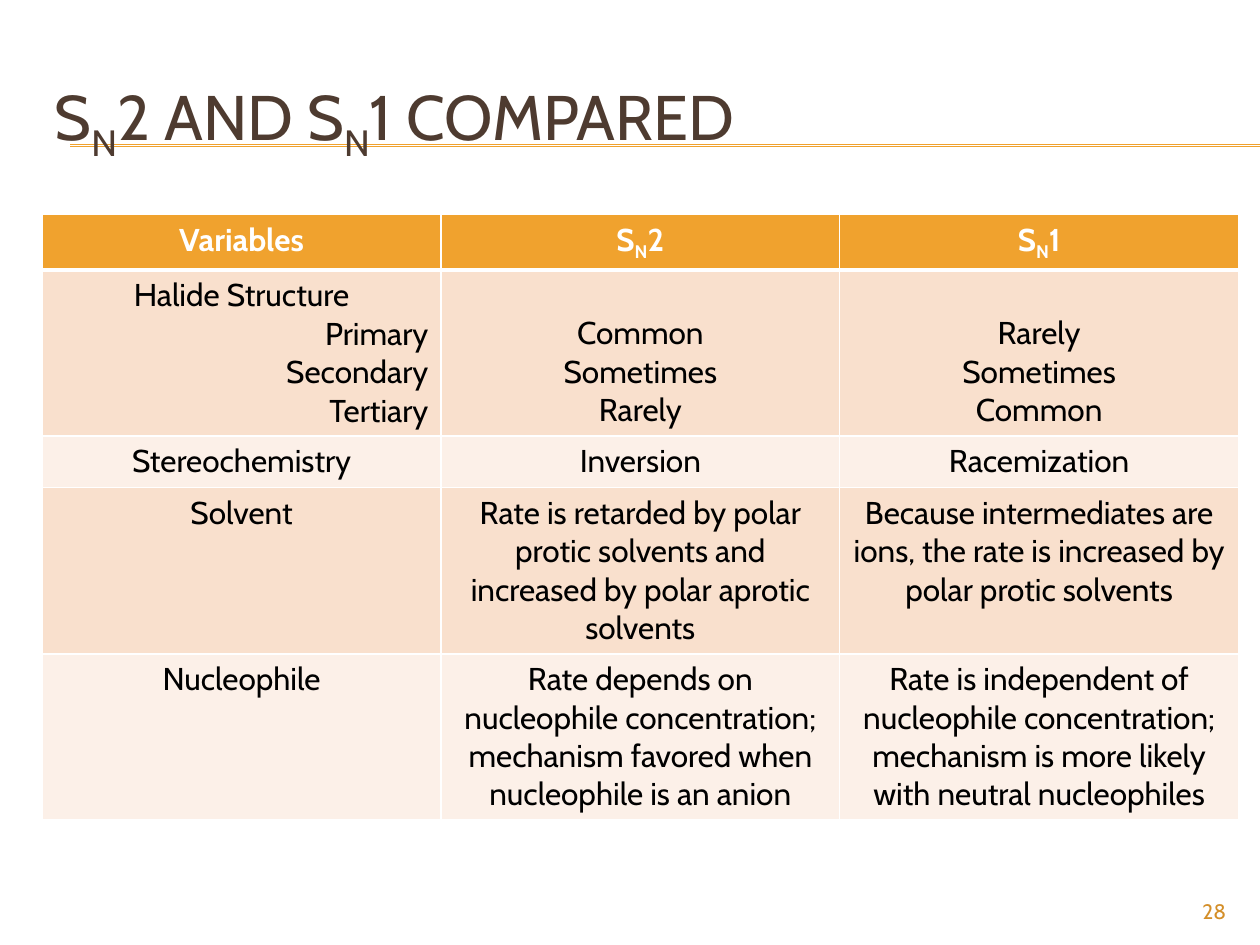
from lxml import etree
from pptx import Presentation
from pptx import util as u
from pptx.dml.color import RGBColor
from pptx.enum import shapes, text
from pptx.oxml.ns import qn

FONT = "Cabin"
COLORS = {
    "accent": "F0A22E",
    "title": "4E3B30",
    "number": "D48F29",
    "white": "FFFFFF",
    "black": "000000",
    "dark_band": "F9E0CD",
    "light_band": "FCF0E8",
}
SUBSCRIPT = "N"
TITLE = ["S", SUBSCRIPT, "2 AND S", SUBSCRIPT, "1 COMPARED"]
SLIDE_NUMBER = "28"

HEADER = [["Variables"], ["S", SUBSCRIPT, "2"], ["S", SUBSCRIPT, "1"]]
BODY = [
    [
        ["Halide Structure", "Primary", "Secondary", "Tertiary"],
        ["Common", "Sometimes", "Rarely"],
        ["Rarely", "Sometimes", "Common"],
    ],
    [["Stereochemistry"], ["Inversion"], ["Racemization"]],
    [
        ["Solvent"],
        ["Rate is retarded by polar protic solvents and increased by polar aprotic solvents"],
        ["Because intermediates are ions, the rate is increased by polar protic solvents"],
    ],
    [
        ["Nucleophile"],
        ["Rate depends on nucleophile concentration; mechanism favored when nucleophile is an anion"],
        ["Rate is independent of nucleophile concentration; mechanism is more likely with neutral nucleophiles"],
    ],
]
ROW_LINES = [1, 4, 1, 4, 4]
FIRST_LINE, NEXT_LINE = 1.04, 0.77

TABLE_LEFT, TABLE_TOP, COLUMN_WIDTH = 0.85, 4.32, 8.04
RULE_LEFT, SLIDE_WIDTH, RULE_TOPS = 1.42, 25.4, [2.92, 2.95]


def rgb(name):
    return RGBColor.from_string(COLORS[name])


def style_run(run, size, color, bold=False):
    run.font.name = FONT
    run.font.size = u.Pt(size)
    run.font.bold = bold
    run.font.color.rgb = rgb(color)


def write_formula(paragraph, parts, size, color, bold=False):
    for part in parts:
        run = paragraph.add_run()
        run.text = part
        style_run(run, size, color, bold)
        if part == SUBSCRIPT:
            run._r.get_or_add_rPr().set("baseline", "-25000")


def write_lines(text_frame, lines):
    text_frame.text = "\n".join(lines)
    for paragraph in text_frame.paragraphs:
        paragraph.alignment = text.PP_ALIGN.CENTER
        for run in paragraph.runs:
            style_run(run, 18, "black")


def set_borders(cell, bottom_width):
    properties = cell._tc.get_or_add_tcPr()
    for side, width in (("L", 1), ("R", 1), ("T", 1), ("B", bottom_width)):
        line = etree.SubElement(properties, qn(f"a:ln{side}"), w=str(u.Pt(width)))
        fill = etree.SubElement(line, qn("a:solidFill"))
        etree.SubElement(fill, qn("a:srgbClr"), val=COLORS["white"])


def finish_cell(cell, color, bottom_width=1):
    set_borders(cell, bottom_width)
    cell.fill.solid()
    cell.fill.fore_color.rgb = rgb(color)


def add_text_box(slide, left, top, width, height, anchor):
    text_frame = slide.shapes.add_textbox(
        u.Cm(left), u.Cm(top), u.Cm(width), u.Cm(height)).text_frame
    text_frame.word_wrap = True
    text_frame.vertical_anchor = anchor
    return text_frame


def add_rules(slide):
    for top in RULE_TOPS:
        rule = slide.shapes.add_connector(
            shapes.MSO_CONNECTOR.STRAIGHT,
            u.Cm(RULE_LEFT), u.Cm(top), u.Cm(SLIDE_WIDTH), u.Cm(top))
        rule.line.color.rgb = rgb("accent")
        rule.line.width = u.Pt(0.75)
        etree.SubElement(rule._element.spPr, qn("a:effectLst"))


def add_comparison(slide):
    heights = [FIRST_LINE + NEXT_LINE * (lines - 1) for lines in ROW_LINES]
    columns = len(HEADER)
    table = slide.shapes.add_table(
        len(heights), columns, u.Cm(TABLE_LEFT), u.Cm(TABLE_TOP),
        u.Cm(COLUMN_WIDTH * columns), u.Cm(sum(heights))).table
    for column in table.columns:
        column.width = u.Cm(COLUMN_WIDTH)
    for row, height in zip(table.rows, heights):
        row.height = u.Cm(height)

    for cell, parts in zip(table.rows[0].cells, HEADER):
        paragraph = cell.text_frame.paragraphs[0]
        paragraph.alignment = text.PP_ALIGN.CENTER
        write_formula(paragraph, parts, 18, "white", bold=True)
        finish_cell(cell, "accent", bottom_width=3)

    for index, entries in enumerate(BODY, start=1):
        band = "dark_band" if index % 2 else "light_band"
        for cell, lines in zip(table.rows[index].cells, entries):
            write_lines(cell.text_frame, lines)
            finish_cell(cell, band)

    structure, *outcomes = table.rows[1].cells
    for paragraph in structure.text_frame.paragraphs[1:]:
        paragraph.alignment = text.PP_ALIGN.RIGHT
    for cell in outcomes:
        cell.vertical_anchor = text.MSO_ANCHOR.BOTTOM


def main():
    presentation = Presentation()
    presentation.slide_width = u.Cm(SLIDE_WIDTH)
    presentation.slide_height = u.Cm(19.05)
    slide = presentation.slides.add_slide(presentation.slide_layouts[6])

    add_rules(slide)
    title = add_text_box(slide, 0.85, 1.27, 24.13, 2.34, text.MSO_ANCHOR.MIDDLE)
    write_formula(title.paragraphs[0], TITLE, 36, "title")
    add_comparison(slide)

    number = add_text_box(slide, 22.86, 17.98, 2.11, 0.69, text.MSO_ANCHOR.TOP)
    number.text = SLIDE_NUMBER
    number.paragraphs[0].alignment = text.PP_ALIGN.RIGHT
    style_run(number.paragraphs[0].runs[0], 12, "number")

    presentation.save("out.pptx")


if __name__ == "__main__":
    main()
